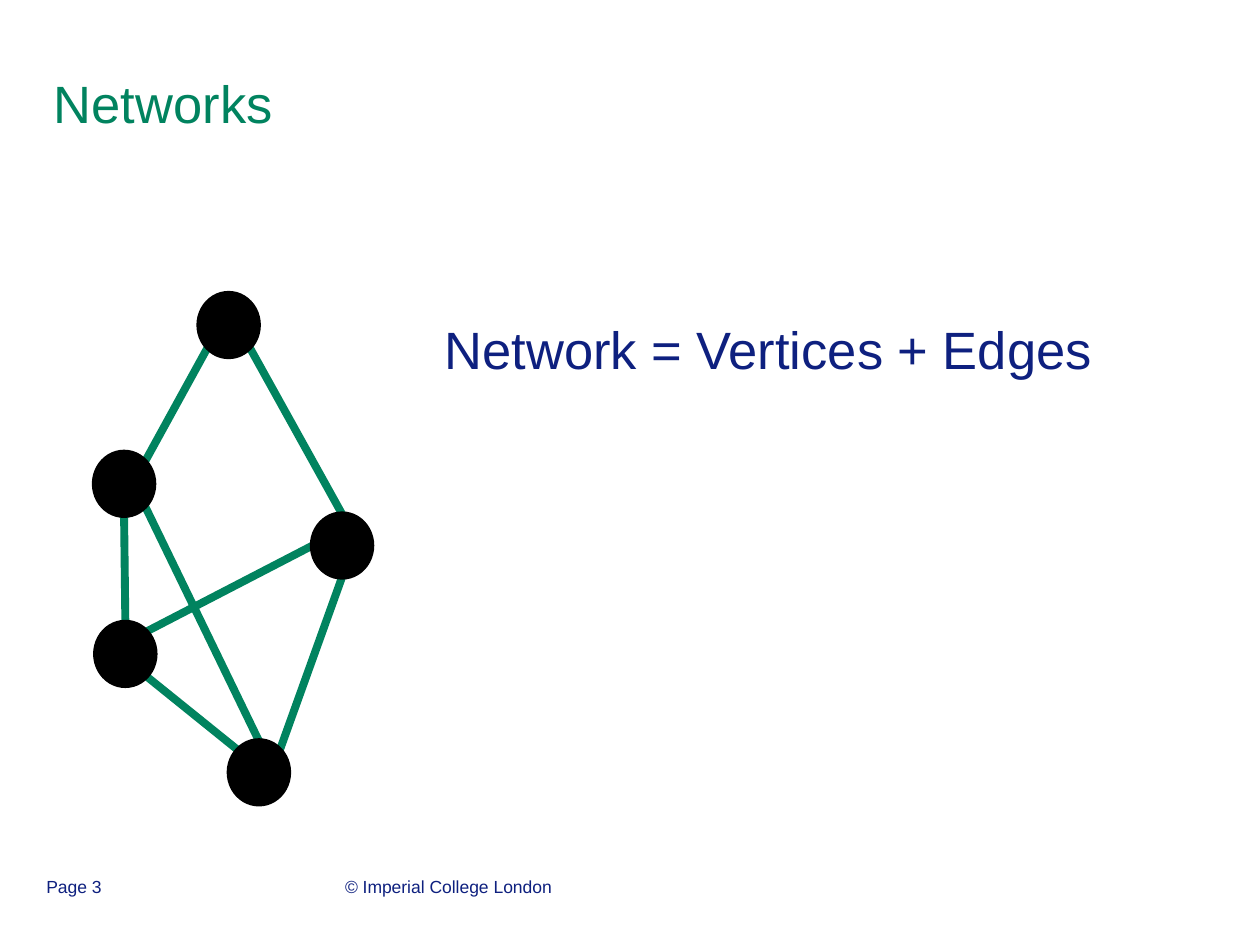
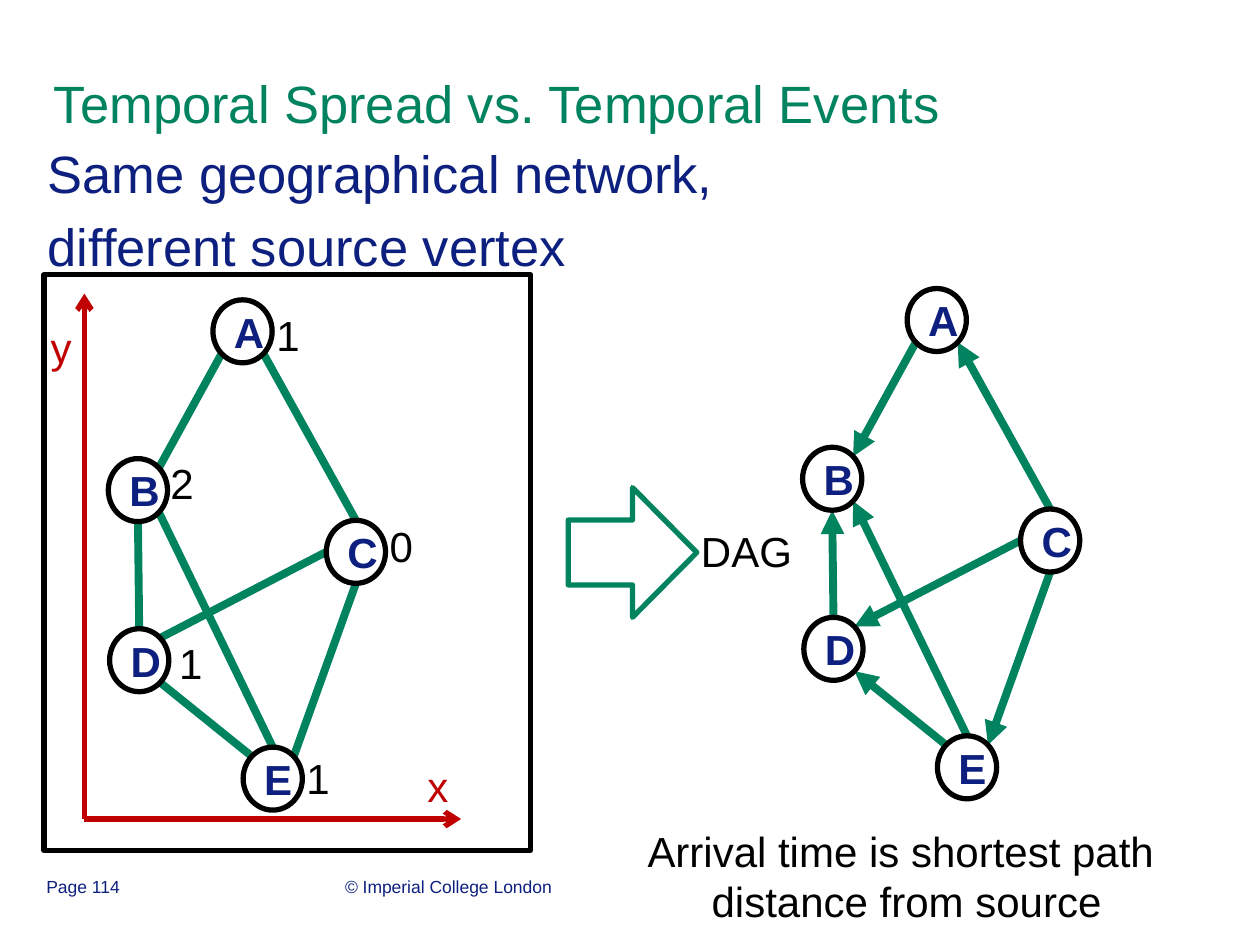
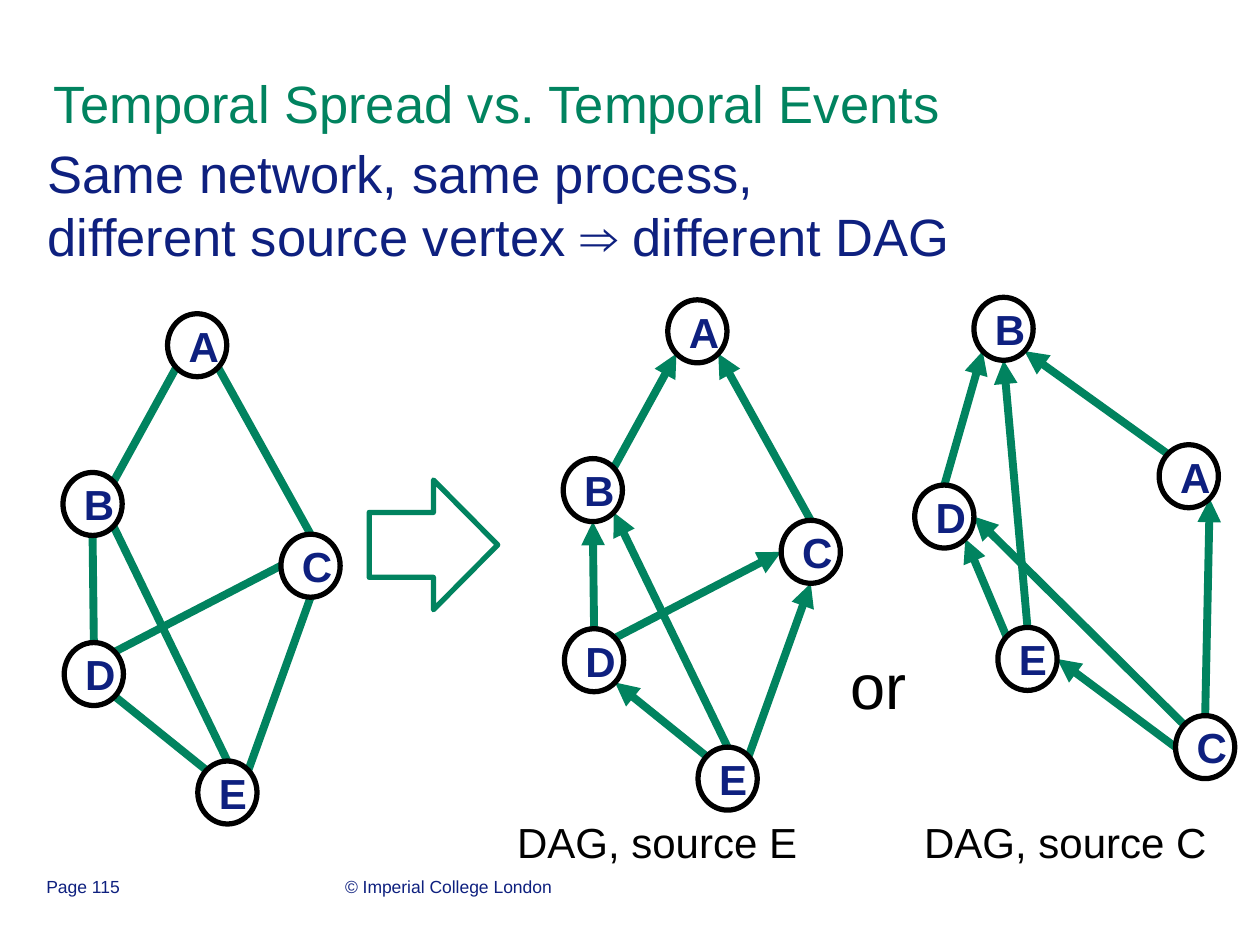
from dataclasses import dataclass
from math import cos, radians, sin

from lxml import etree
from pptx import Presentation
from pptx.dml.color import RGBColor
from pptx.enum.shapes import MSO_CONNECTOR, MSO_SHAPE
from pptx.enum.text import MSO_ANCHOR, PP_ALIGN
from pptx.oxml.ns import qn
from pptx.util import Pt, Inches

# The slide is a grid of 10 columns by 7.5 rows of square cells
CELL = Inches(1)
COLUMNS, ROWS = 10, 7.5

GREEN = RGBColor(0x01, 0x83, 0x5F)
NAVY = RGBColor(0x0E, 0x20, 0x7F)
RED = RGBColor(0xC0, 0x00, 0x00)
BLACK = RGBColor(0x00, 0x00, 0x00)
FONT = "Arial"

LEFT, CENTER = PP_ALIGN.LEFT, PP_ALIGN.CENTER
TOP, MIDDLE = MSO_ANCHOR.TOP, MSO_ANCHOR.MIDDLE
STRAIGHT = MSO_CONNECTOR.STRAIGHT
OVAL, RECTANGLE = MSO_SHAPE.OVAL, MSO_SHAPE.RECTANGLE
RIGHT_ARROW = MSO_SHAPE.RIGHT_ARROW

TITLE_BOX = (0.33, 0.19, 8.5, 1.25)
PAGE_NUMBER_BOX = (0.27, 6.9, 2.33, 0.52)
COPYRIGHT_BOX = (2.64, 6.9, 3.17, 0.52)

VERTEX_WIDTH, VERTEX_HEIGHT = 0.47, 0.5
# Points on a vertex where edges attach, in degrees clockwise from east
PORTS = {port: 45 * step for step, port in
         enumerate(("e", "se", "s", "sw", "w", "nw", "n", "ne"))}


@dataclass
class Layout:
    vertices: dict  # name: offset of the vertex from the graph's corner
    edges: dict     # two vertex names: the ports the edge joins


GEOGRAPHIC = Layout(
    {"A": (0.83, 0), "C": (1.73, 1.75), "D": (0.01, 2.61),
     "B": (0, 1.26), "E": (1.07, 3.55)},
    {"AB": ("sw", "ne"), "BD": ("s", "n"), "ED": ("nw", "se"),
     "EC": ("ne", "s"), "AC": ("se", "n"), "CD": ("w", "ne"),
     "EB": ("n", "se")})
REARRANGED = Layout(
    {"A": (1.94, 1.17), "C": (2.07, 3.32), "D": (0, 1.49),
     "B": (0.47, 0), "E": (0.66, 2.62)},
    {"AB": ("nw", "se"), "BD": ("sw", "n"), "ED": ("nw", "se"),
     "EC": ("e", "w"), "AC": ("se", "n"), "CD": ("nw", "e"),
     "EB": ("n", "s")})

# Directed edges for each source vertex
SOURCE_C = {"AB", "DB", "ED", "CE", "CA", "CD", "EB"}
SOURCE_E = {"BA", "DB", "ED", "EC", "CA", "DC", "EB"}


def cells(*lengths):
    return [round(length * CELL) for length in lengths]


def write(frame, paragraphs, size, color, align=LEFT, bold=False):
    """Fill a frame; a newline inside a paragraph is a line break."""
    for index, text in enumerate(paragraphs):
        para = frame.paragraphs[0] if index == 0 else frame.add_paragraph()
        para.alignment = align
        if index:
            para.space_before = Pt(size * 0.2)
        for number, line in enumerate(text.split("\n")):
            if number:
                para.add_line_break()
            span = para.add_run()
            span.text = line
            span.font.name = FONT
            span.font.size = Pt(size)
            span.font.bold = bold
            span.font.color.rgb = color


def add_text(page, box, paragraphs, size, color, anchor=TOP):
    frame = page.shapes.add_textbox(*cells(*box)).text_frame
    frame.word_wrap = True
    frame.vertical_anchor = anchor
    write(frame, paragraphs, size, color)


def add_caption(page, box, text, size=24, color=BLACK):
    frame = page.shapes.add_textbox(*cells(*box)).text_frame
    frame.word_wrap = False
    write(frame, [text], size, color, CENTER)


def add_outline(page, kind, box, color, fill=None):
    shape = page.shapes.add_shape(kind, *cells(*box))
    shape.shadow.inherit = False
    if fill is None:
        shape.fill.background()
    else:
        shape.fill.solid()
        shape.fill.fore_color.rgb = fill
    shape.line.color.rgb = color
    shape.line.width = Pt(3)
    return shape


def add_line(page, start, end, color, width, head=None, tail=None):
    line = page.shapes.add_connector(STRAIGHT, *cells(*start, *end))
    line.line.color.rgb = color
    line.line.width = Pt(width)
    outline = line.line._get_or_add_ln()
    for tag, kind in (("a:headEnd", head), ("a:tailEnd", tail)):
        if kind:
            etree.SubElement(outline, qn(tag), type=kind)
    etree.SubElement(line._element.spPr, qn("a:effectLst"))


def port_point(corner, port):
    angle = radians(PORTS[port])
    return (corner[0] + VERTEX_WIDTH / 2 * (1 + cos(angle)),
            corner[1] + VERTEX_HEIGHT / 2 * (1 + sin(angle)))


def add_graph(page, left, top, layout=GEOGRAPHIC, directed=(), solid=False):
    corners = {name: (left + x, top + y)
               for name, (x, y) in layout.vertices.items()}
    # Edges
    for (first, second), (start, end) in layout.edges.items():
        add_line(page, port_point(corners[first], start),
                 port_point(corners[second], end), GREEN, 4.5,
                 head="triangle" if second + first in directed else None,
                 tail="triangle" if first + second in directed else None)
    # Vertices
    for name, corner in corners.items():
        vertex = add_outline(page, OVAL,
                             (*corner, VERTEX_WIDTH, VERTEX_HEIGHT),
                             BLACK, BLACK if solid else None)
        if not solid:
            vertex.text_frame.word_wrap = False
            vertex.text_frame.vertical_anchor = MIDDLE
            write(vertex.text_frame, [name], 24, NAVY, bold=True)
    return corners


def add_block_arrow(page, left, top):
    add_outline(page, RIGHT_ARROW, (left, top, 1.02, 1.03), GREEN)


def add_map(page, left, top, width, height):
    """Framed graph with axes and the arrival time beside each vertex."""
    add_outline(page, RECTANGLE, (left, top, width, height), BLACK)
    # Axes
    origin = (left + 0.32, top + 4.32)
    for end in ((left + 3.31, origin[1]), (origin[0], top + 0.15)):
        add_line(page, origin, end, RED, 3, tail="arrow")
    for name, x, y in (("y", -0.05, 0.32), ("x", 2.94, 3.81)):
        add_caption(page, (left + x, top + y, 0.37, 0.5), name, color=RED)
    # Graph and arrival times
    corners = add_graph(page, left + 0.51, top + 0.2)
    times = {"A": ("1", 0.4, 0.03), "B": ("2", 0.39, -0.06),
             "C": ("0", 0.4, -0.05), "D": ("1", 0.45, 0.02),
             "E": ("1", 0.4, -0.01)}
    for name, (time, x, y) in times.items():
        corner = corners[name]
        add_caption(page, (corner[0] + x, corner[1] + y, 0.39, 0.5), time)


def add_page(deck, title, number, body_box, body):
    page = deck.slides.add_slide(deck.slide_layouts[6])
    add_text(page, TITLE_BOX, [title], 30, GREEN, MIDDLE)
    add_text(page, body_box, body, 30, NAVY)
    add_text(page, COPYRIGHT_BOX, ["© Imperial College London"], 10, NAVY)
    add_text(page, PAGE_NUMBER_BOX, [f"Page {number}"], 10, NAVY)
    return page


def networks_page(deck):
    page = add_page(deck, "Networks", 3, (3.43, 2.47, 5.59, 0.95),
                    ["Network = Vertices + Edges"])
    add_graph(page, 0.75, 2.33, solid=True)


def arrival_page(deck):
    page = add_page(deck, "Temporal Spread vs. Temporal Events", 114,
                    (0.28, 1.07, 5.51, 1.26),
                    ["Same geographical network,", "different source vertex"])
    add_map(page, 0.35, 2.18, 3.86, 4.57)
    add_block_arrow(page, 4.51, 3.87)
    add_caption(page, (5.46, 4.12, 0.93, 0.5), "DAG")
    add_graph(page, 6.37, 2.29, directed=SOURCE_C)
    add_caption(page, (5.02, 6.5, 4.35, 0.91),
                "Arrival time is shortest path \ndistance from source")


def sources_page(deck):
    page = add_page(deck, "Temporal Spread vs. Temporal Events", 115,
                    (0.28, 1.07, 9.29, 1.26),
                    ["Same network, same process, \n"
                     "different source vertex ⇒ different DAG"])
    add_graph(page, 0.5, 2.49)
    add_block_arrow(page, 2.93, 3.81)
    add_graph(page, 4.47, 2.38, directed=SOURCE_E)
    add_graph(page, 7.26, 2.36, REARRANGED, SOURCE_C)
    # Captions
    add_caption(page, (3.99, 6.43, 2.45, 0.5), "DAG, source E")
    add_caption(page, (7.22, 6.43, 2.47, 0.5), "DAG, source C")
    add_caption(page, (6.65, 5.08, 0.65, 0.71), "or", size=36)


def main():
    deck = Presentation()
    deck.slide_width, deck.slide_height = cells(COLUMNS, ROWS)
    networks_page(deck)
    arrival_page(deck)
    sources_page(deck)
    deck.save("out.pptx")


if __name__ == "__main__":
    main()
